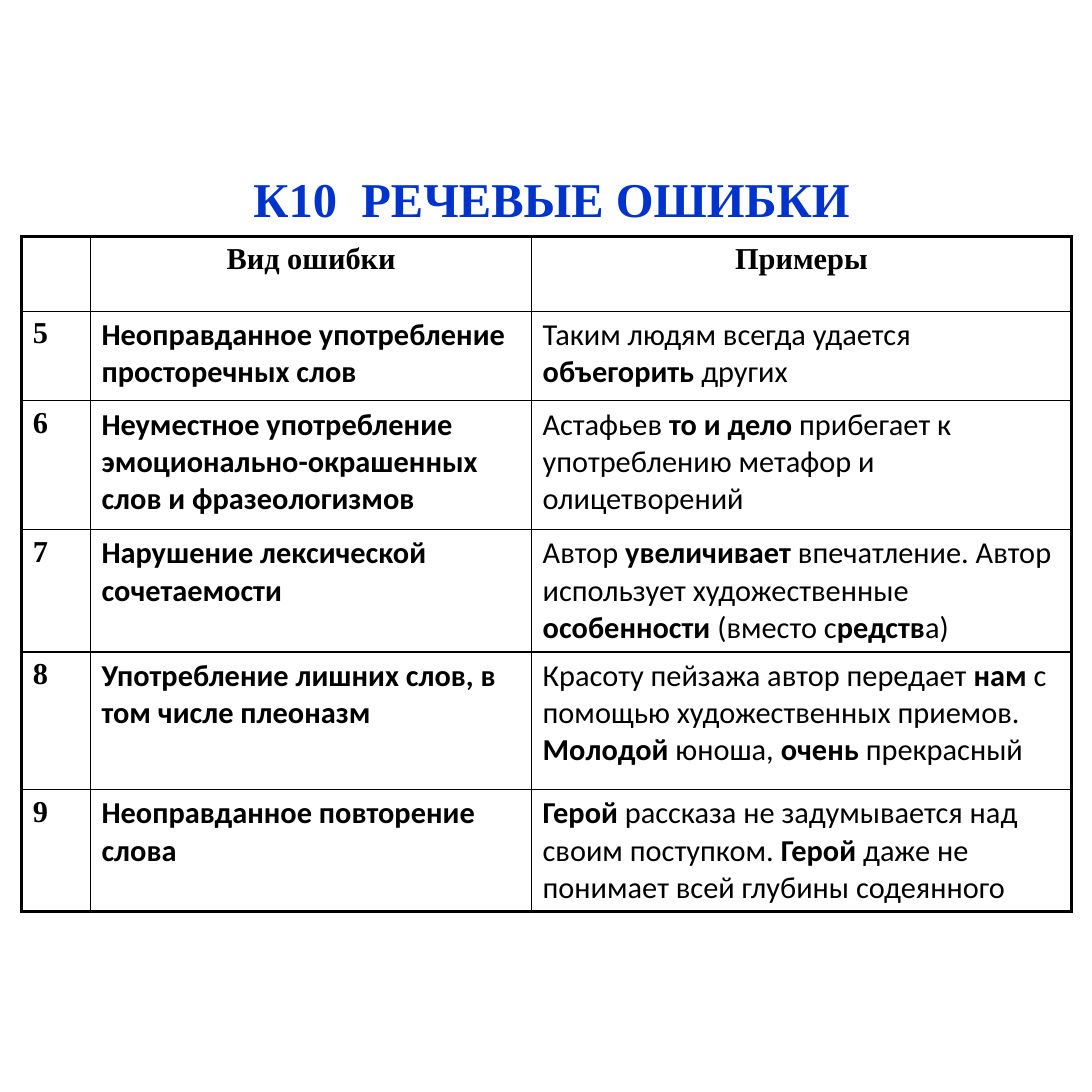
from pptx import Presentation
from pptx.dml.color import RGBColor
from pptx.enum.text import MSO_ANCHOR as Anchor, PP_ALIGN as Align
from pptx.oxml import parse_xml
from pptx.oxml.ns import nsdecls
from pptx.util import Inches, Pt

# Content: asterisks enclose bold words
TITLE = "К10  РЕЧЕВЫЕ ОШИБКИ"
ROWS = [
    ("", "*Вид ошибки*", "*Примеры*"),
    ("*5*", "*Неоправданное употребление просторечных слов*",
     "Таким людям всегда удается *объегорить *других"),
    ("*6*", "*Неуместное употребление эмоционально-окрашенных слов и фразеологизмов*",
     "Астафьев *то и дело *прибегает к употреблению метафор и олицетворений"),
    ("*7*", "*Нарушение лексической сочетаемости*",
     "Автор *увеличивает* впечатление. Автор использует художественные "
     "*особенности *(вместо с*редств*а)"),
    ("*8*", "*Употребление лишних слов, в том числе плеоназм*",
     "Красоту пейзажа автор передает *нам* с помощью художественных приемов. "
     "*Молодой* юноша, *очень *прекрасный"),
    ("*9*", "*Неоправданное повторение слова*",
     "*Герой *рассказа не задумывается над своим поступком. "
     "*Герой* даже не понимает всей глубины содеянного"),
]
WIDTHS = [0.63, 4.04, 4.94]
HEIGHTS = [0.68, 0.82, 1.18, 1.1, 1.26, 1.1]
SERIF, SANS = "Times New Roman", "Calibri"
BLACK, BLUE = "000000", "0033CC"
THIN, THICK = 1, 2.25


def style(font, color, **values):
    font.color.rgb = RGBColor.from_string(color)
    for key, value in values.items():
        setattr(font, key, value)


def border(cell, side, width):
    cell._tc.get_or_add_tcPr().append(parse_xml(
        f'<a:ln{side} {nsdecls("a")} w="{Pt(width)}"><a:solidFill>'
        f'<a:srgbClr val="{BLACK}"/></a:solidFill></a:ln{side}>'))


def write(cell, text, name, align):
    para = cell.text_frame.paragraphs[0]
    para.alignment = align
    for i, part in enumerate(text.split("*")):
        if part:
            run = para.add_run()
            run.text = part
            style(run.font, BLACK, name=name, size=Pt(20), bold=i % 2 == 1)


deck = Presentation()
deck.slide_width = deck.slide_height = Inches(10)
slide = deck.slides.add_slide(deck.slide_layouts[5])

# Title
title = slide.shapes.title
title.left, title.top, title.width, title.height = map(Inches, (2.32, 1.55, 7.48, 0.94))
frame = title.text_frame
frame.text = TITLE
for key, value in {"margin_left": 0, "margin_top": 0, "margin_right": 0,
                   "margin_bottom": 0, "vertical_anchor": Anchor.TOP}.items():
    setattr(frame, key, value)
para = frame.paragraphs[0]
para.alignment = Align.LEFT
style(para.runs[0].font, BLUE, name=SERIF, size=Pt(32), bold=True)

# Table
table = slide.shapes.add_table(
    len(ROWS), len(WIDTHS), Inches(0.2), Inches(2.17),
    Inches(sum(WIDTHS)), Inches(sum(HEIGHTS))).table
table.first_row = table.horz_banding = False
for col, width in zip(table.columns, WIDTHS):
    col.width = Inches(width)
for row, height in zip(table.rows, HEIGHTS):
    row.height = Inches(height)

# Cells: thick outer frame, thin inner lines
for r, texts in enumerate(ROWS):
    for c, text in enumerate(texts):
        cell = table.cell(r, c)
        edges = {"L": c == 0, "R": c == len(WIDTHS) - 1,
                 "T": r == 0, "B": r == len(ROWS) - 1}
        for side, outer in edges.items():
            border(cell, side, THICK if outer else THIN)
        cell.fill.background()
        write(cell, text, SERIF if r == 0 or c == 0 else SANS,
              Align.CENTER if r == 0 else Align.LEFT)

deck.save("out.pptx")
